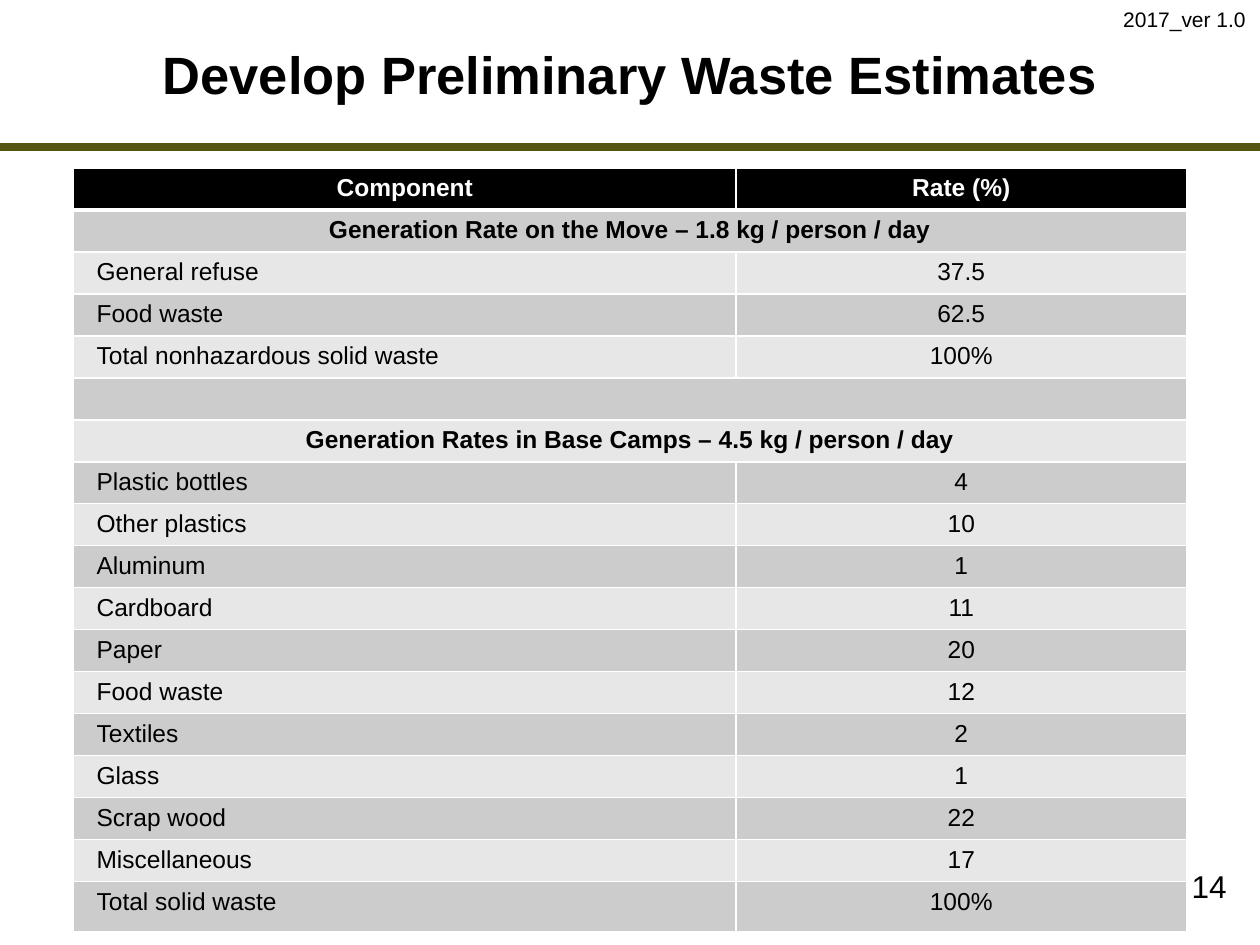
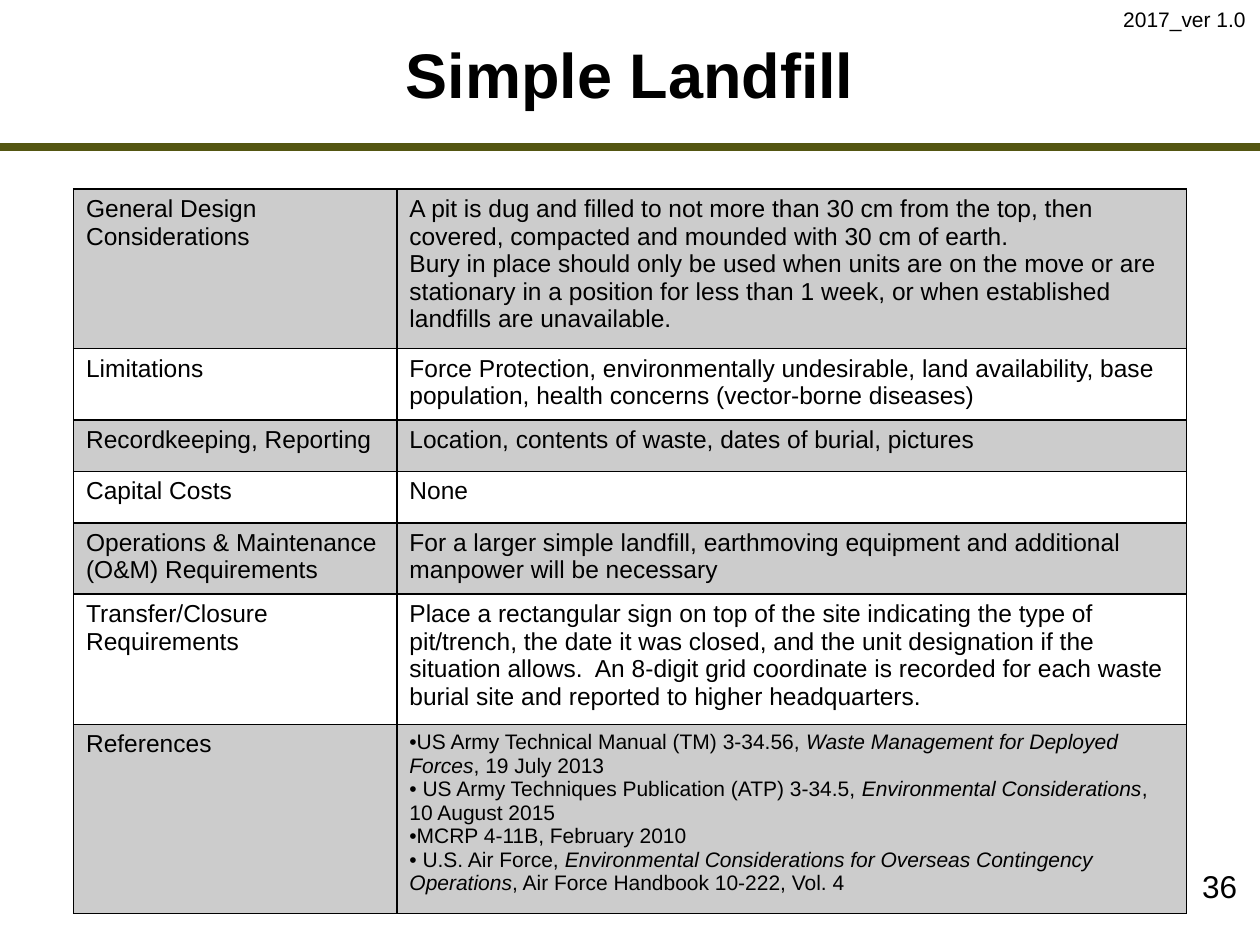
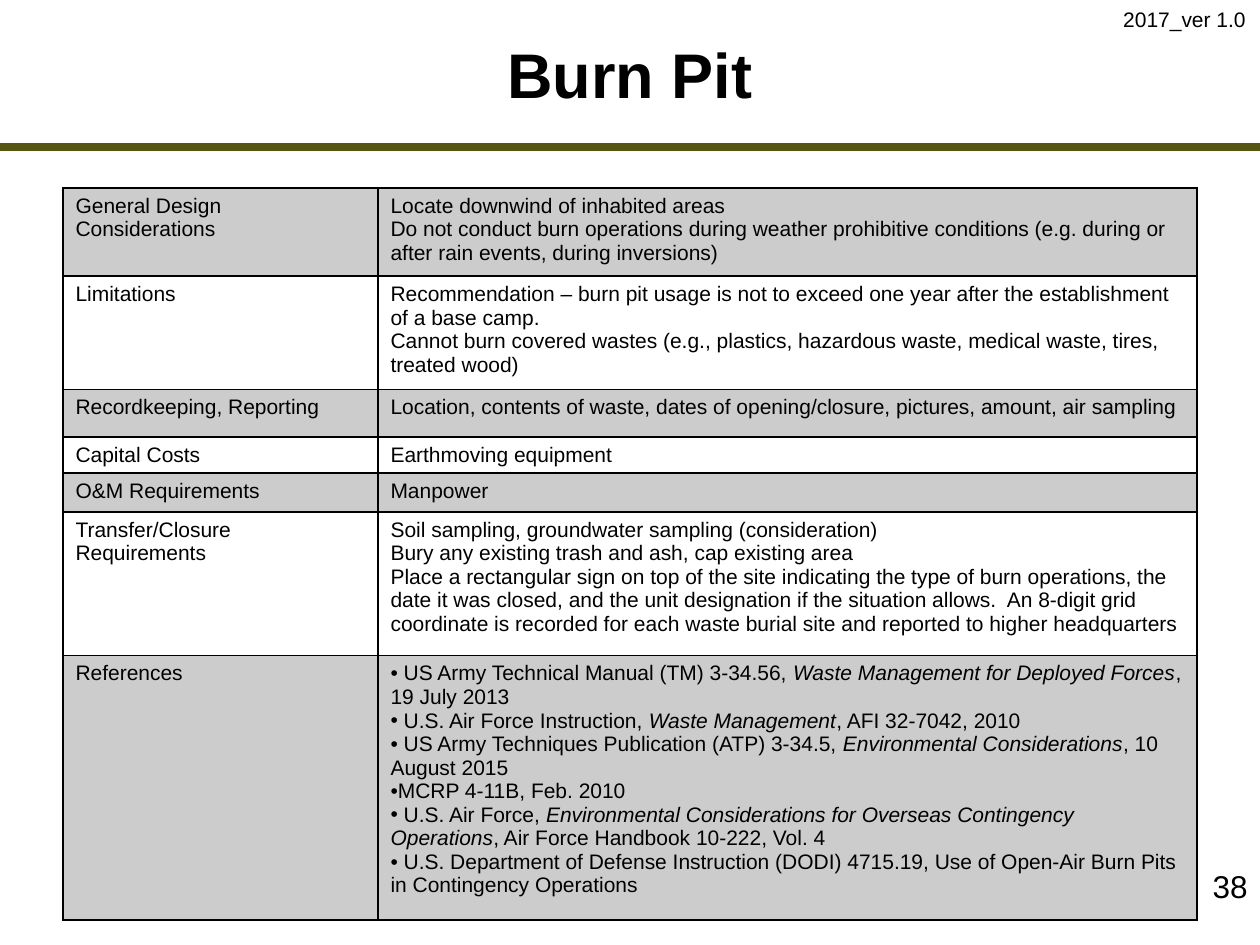
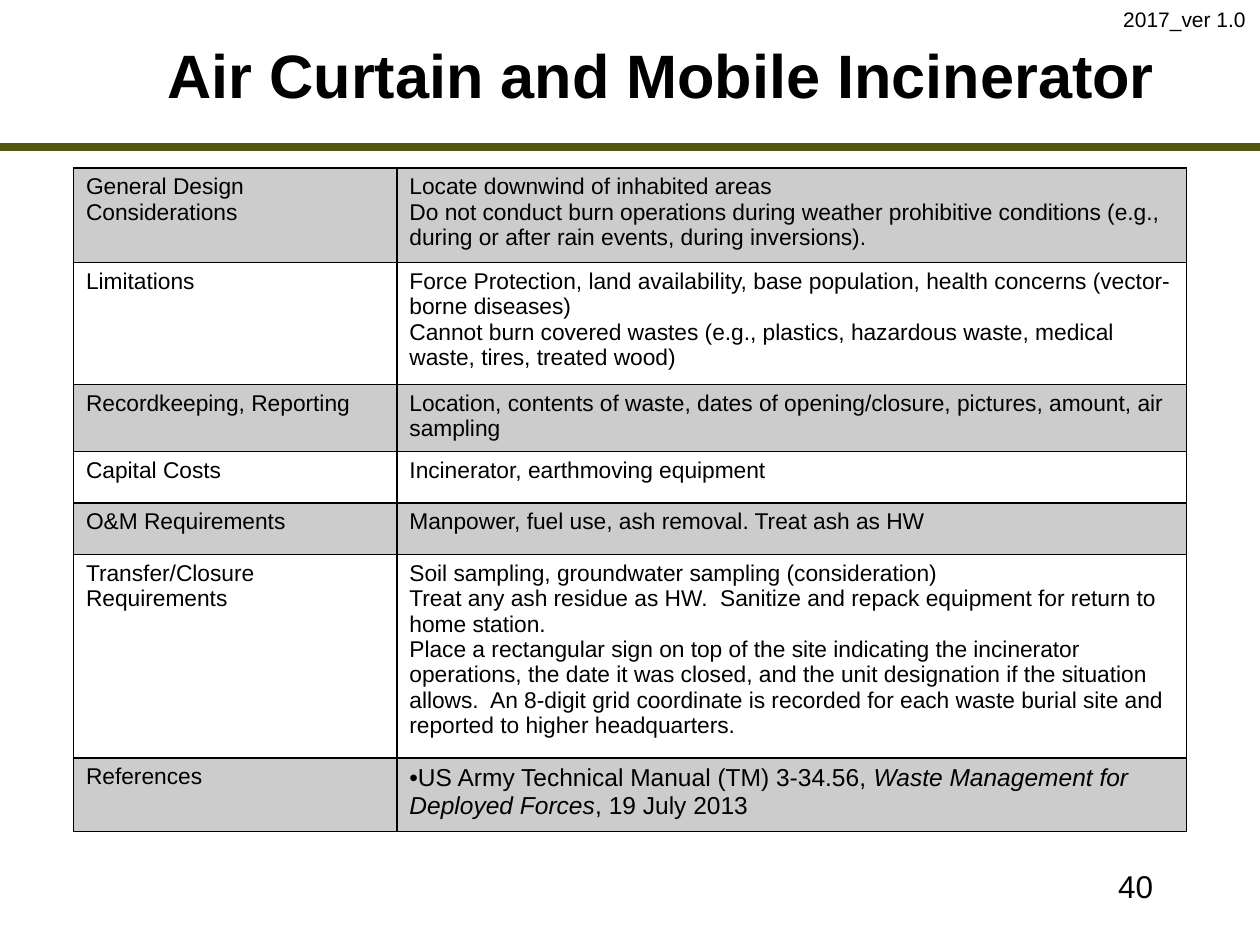
from dataclasses import dataclass

from lxml.etree import SubElement
from pptx import Presentation
from pptx.dml.color import RGBColor
from pptx.enum.shapes import MSO_CONNECTOR
from pptx.enum.text import MSO_ANCHOR, PP_ALIGN
from pptx.oxml import parse_xml
from pptx.oxml.ns import nsdecls, qn
from pptx.util import Inches, Pt

# The slide is a grid of 120 columns by 90 rows, twelve to the inch.
COLUMNS, ROWS = 120, 90
FONT = "Arial"
BLACK, WHITE, OLIVE = "000000", "FFFFFF", "545612"
DARK_BAND, LIGHT_BAND = "CCCCCC", "E7E7E7"
VERSION = "2017_ver 1.0"
BULLET = "•"


@dataclass(frozen=True)
class TableStyle:
    border: str
    side_margin: float  # grid columns
    centre_values: bool
    has_header: bool


RATES = TableStyle(WHITE, 2.2, True, True)
FACTS = TableStyle(BLACK, 1.2, False, False)


@dataclass(frozen=True)
class WasteTable:
    """A row of one text spans both columns; '*' marks italics."""
    style: TableStyle
    top: float
    width: float
    label_width: float
    heights: list[float]
    rows: list[tuple[str, ...]]
    size: int
    reference_size: int


@dataclass(frozen=True)
class Page:
    title: str
    title_size: int
    number: int
    number_left: float
    table: WasteTable
    title_width: float = 92


def grid(units: float) -> int:
    return Inches(units / 12)


def colour(value: str) -> RGBColor:
    return RGBColor.from_string(value)


def set_font(para, size: float, fill: str = BLACK, bold: bool = False) -> None:
    font = para.font
    font.name, font.size, font.bold = FONT, Pt(size), bold
    font.color.rgb = colour(fill)


def add_text(slide, text: str, place: tuple, size: float, align=PP_ALIGN.LEFT,
             bold: bool = False, wrap: bool = True, anchor=MSO_ANCHOR.TOP) -> None:
    frame = slide.shapes.add_textbox(*map(grid, place)).text_frame
    frame.word_wrap, frame.vertical_anchor = wrap, anchor
    para = frame.paragraphs[0]
    para.text, para.alignment = text, align
    set_font(para, size, bold=bold)


def add_rule(slide) -> None:
    rule = slide.shapes.add_connector(
        MSO_CONNECTOR.STRAIGHT, 0, grid(14), grid(COLUMNS), grid(14))
    rule.line.color.rgb = colour(OLIVE)
    rule.line.width = Pt(4.5)
    SubElement(rule._element.spPr, qn("a:effectLst"))


def add_bullet(para) -> None:
    properties = para._p.get_or_add_pPr()
    properties.set("marL", "0")
    properties.set("indent", "0")
    SubElement(properties, qn("a:buFont")).set("typeface", FONT)
    SubElement(properties, qn("a:buChar")).set("char", BULLET)


def write_cell(cell, text: str, size: int, fill: str, bold: bool, align) -> None:
    frame = cell.text_frame
    for index, line in enumerate(text.split("\n")):
        para = frame.add_paragraph() if index else frame.paragraphs[0]
        para.alignment = align
        if line.startswith(BULLET):
            add_bullet(para)
        for part, words in enumerate(line.removeprefix(BULLET).split("*")):
            if words:
                span = para.add_run()
                span.text = words
                if part % 2:
                    span.font.italic = True
        set_font(para, size, fill, bold)
        if not line:
            SubElement(para._p, qn("a:endParaRPr")).set("sz", str(size * 100))


def paint_cell(cell, style: TableStyle, row: int) -> None:
    if style.has_header:
        cell.fill.solid()
        band = DARK_BAND if row % 2 else LIGHT_BAND
        cell.fill.fore_color.rgb = colour(band if row else BLACK)
    elif row % 2:
        cell.fill.background()
    else:
        cell.fill.solid()
        cell.fill.fore_color.rgb = colour(BLACK)
        tint = cell._tc.get_or_add_tcPr().find(".//" + qn("a:srgbClr"))
        SubElement(tint, qn("a:alpha")).set("val", "20000")


def draw_borders(cell, style: TableStyle, row: int) -> None:
    thick_side = {0: "B", 1: "T"}.get(row) if style.has_header else None
    for index, side in enumerate("LRTB"):
        width = Pt(3 if side == thick_side else 1)
        cell._tc.get_or_add_tcPr().insert(index, parse_xml(
            f'<a:ln{side} {nsdecls("a")} w="{width}"><a:solidFill>'
            f'<a:srgbClr val="{style.border}"/></a:solidFill></a:ln{side}>'))


def add_waste_table(slide, spec_table: WasteTable) -> None:
    style, rows = spec_table.style, spec_table.rows
    left = (COLUMNS - spec_table.width) / 2
    table = slide.shapes.add_table(
        len(rows), 2, grid(left), grid(spec_table.top),
        grid(spec_table.width), grid(sum(spec_table.heights))).table
    table.first_row = table.horz_banding = False
    table.columns[0].width = grid(spec_table.label_width)
    table.columns[1].width = grid(spec_table.width - spec_table.label_width)
    for row, (texts, height) in enumerate(zip(rows, spec_table.heights)):
        table.rows[row].height = grid(height)
        spanned = len(texts) == 1
        header = style.has_header and row == 0
        for column in range(2):
            cell = table.cell(row, column)
            cell.margin_left = cell.margin_right = grid(style.side_margin)
            paint_cell(cell, style, row)
            draw_borders(cell, style, row)
        if spanned:
            table.cell(row, 0).merge(table.cell(row, 1))
        for column, text in enumerate(texts):
            centred = header or spanned or (style.centre_values and column == 1)
            size = spec_table.reference_size if text.startswith(BULLET) else spec_table.size
            write_cell(table.cell(row, column), text, size,
                       WHITE if header else BLACK, header or spanned,
                       PP_ALIGN.CENTER if centred else PP_ALIGN.LEFT)


def add_page(deck, page: Page) -> None:
    slide = deck.slides.add_slide(deck.slide_layouts[6])
    add_rule(slide)
    add_waste_table(slide, page.table)
    add_text(slide, page.title, (14, 2, page.title_width, 10), page.title_size,
             PP_ALIGN.CENTER, bold=True, anchor=MSO_ANCHOR.MIDDLE)
    add_text(slide, str(page.number), (page.number_left, 82, 25, 6), 18, PP_ALIGN.RIGHT)
    add_text(slide, VERSION, (105.8, 0, 14.2, 3.6), 12, wrap=False)


DESIGN = "General Design Considerations"
LIMITS = "Limitations"
RECORDS = "Recordkeeping, Reporting"
COSTS = "Capital Costs"
UPKEEP = "O&M Requirements"
CLOSURE = "Transfer/Closure Requirements"
REFERENCES = "References"

MANUAL = "US Army Technical Manual (TM) 3-34.56, *Waste Management for Deployed Forces*, 19 July 2013"
TECHNIQUES = ("• US Army Techniques Publication (ATP) 3-34.5, "
              "*Environmental Considerations*, 10 August 2015")
HANDBOOK = ("• U.S. Air Force, *Environmental Considerations for Overseas Contingency "
            "Operations*, Air Force Handbook 10-222, Vol. 4")
COVERED_WASTES = ("Cannot burn covered wastes (e.g., plastics, hazardous waste, "
                  "medical waste, tires, treated wood)")
BURN_RECORDS = ("Location, contents of waste, dates of opening/closure, pictures, "
                "amount, air sampling")
SAMPLING = "Soil sampling, groundwater sampling (consideration)"


def sign_text(subject: str) -> str:
    return (f"Place a rectangular sign on top of the site indicating the {subject}, "
            "the date it was closed, and the unit designation if the situation allows.  "
            "An 8-digit grid coordinate is recorded for each waste burial site "
            "and reported to higher headquarters")


def downwind_text(example: str) -> str:
    return ("Locate downwind of inhabited areas\n"
            "Do not conduct burn operations during weather prohibitive conditions "
            f"({example} during or after rain events, during inversions)")


ESTIMATES = WasteTable(
    RATES, 16, 106, 63.1, [4] * 17 + [4.8],
    [
        ("Component", "Rate (%)"),
        ("Generation Rate on the Move – 1.8 kg / person / day",),
        ("General refuse", "37.5"),
        ("Food waste", "62.5"),
        ("Total nonhazardous solid waste", "100%"),
        ("",),
        ("Generation Rates in Base Camps – 4.5 kg / person / day",),
        ("Plastic bottles", "4"),
        ("Other plastics", "10"),
        ("Aluminum", "1"),
        ("Cardboard", "11"),
        ("Paper", "20"),
        ("Food waste", "12"),
        ("Textiles", "2"),
        ("Glass", "1"),
        ("Scrap wood", "22"),
        ("Miscellaneous", "17"),
        ("Total solid waste", "100%"),
    ], 14, 14)

LANDFILL = WasteTable(
    FACTS, 18, 106, 30.8, [15.2, 6.8, 4.9, 4.9, 6.8, 12.4, 18],
    [
        (DESIGN, "A pit is dug and filled to not more than 30 cm from the top, then "
                 "covered, compacted and mounded with 30 cm of earth.\n"
                 "Bury in place should only be used when units are on the move or are "
                 "stationary in a position for less than 1 week, or when established "
                 "landfills are unavailable."),
        (LIMITS, "Force Protection, environmentally undesirable, land availability, "
                 "base population, health concerns (vector-borne diseases)"),
        (RECORDS, "Location, contents of waste, dates of burial, pictures"),
        (COSTS, "None"),
        ("Operations & Maintenance (O&M) Requirements",
         "For a larger simple landfill, earthmoving equipment and additional "
         "manpower will be necessary"),
        (CLOSURE, sign_text("type of pit/trench") + "."),
        (REFERENCES, "\n".join([BULLET + MANUAL, TECHNIQUES,
                                "•MCRP 4-11B, February 2010", HANDBOOK])),
    ], 14, 12)

BURN_PIT = WasteTable(
    FACTS, 17.9, 108, 30, [8.4, 10.8, 4.5, 3, 3.7, 13.7, 25.2],
    [
        (DESIGN, downwind_text("e.g.")),
        (LIMITS, "Recommendation – burn pit usage is not to exceed one year after the "
                 "establishment of a base camp.\n" + COVERED_WASTES),
        (RECORDS, BURN_RECORDS),
        (COSTS, "Earthmoving equipment"),
        (UPKEEP, "Manpower"),
        (CLOSURE, "\n".join([SAMPLING, "Bury any existing trash and ash, cap existing area",
                             sign_text("type of burn operations")])),
        (REFERENCES, "\n".join([
            f"{BULLET} {MANUAL}",
            "• U.S. Air Force Instruction, *Waste Management*, AFI 32-7042, 2010",
            TECHNIQUES, "•MCRP 4-11B, Feb. 2010", HANDBOOK,
            "• U.S. Department of Defense Instruction (DODI) 4715.19, "
            "Use of Open-Air Burn Pits in Contingency Operations"])),
    ], 12, 12)

INCINERATOR = WasteTable(
    FACTS, 16, 106, 30.8, [9, 11.6, 6.4, 4.9, 4.9, 19.4, 7],
    [
        (DESIGN, downwind_text("e.g.,") + "."),
        (LIMITS, "Force Protection, land availability, base population, health concerns "
                 "(vector-borne diseases)\n" + COVERED_WASTES),
        (RECORDS, BURN_RECORDS),
        (COSTS, "Incinerator, earthmoving equipment"),
        (UPKEEP, "Manpower, fuel use, ash removal. Treat ash as HW"),
        (CLOSURE, "\n".join([SAMPLING,
                             "Treat any ash residue as HW.  Sanitize and repack "
                             "equipment for return to home station.",
                             sign_text("incinerator operations") + "."])),
        (REFERENCES, BULLET + MANUAL),
    ], 13, 14)

PAGES = [
    Page("Develop Preliminary Waste Estimates", 30, 14, 93, ESTIMATES),
    Page("Simple Landfill", 36, 36, 94, LANDFILL),
    Page("Burn Pit", 36, 38, 95, BURN_PIT),
    Page("Air Curtain and Mobile Incinerator", 35, 40, 86, INCINERATOR, title_width=98),
]


def main() -> None:
    deck = Presentation()
    deck.slide_width, deck.slide_height = grid(COLUMNS), grid(ROWS)
    for page in PAGES:
        add_page(deck, page)
    deck.save("out.pptx")


if __name__ == "__main__":
    main()
